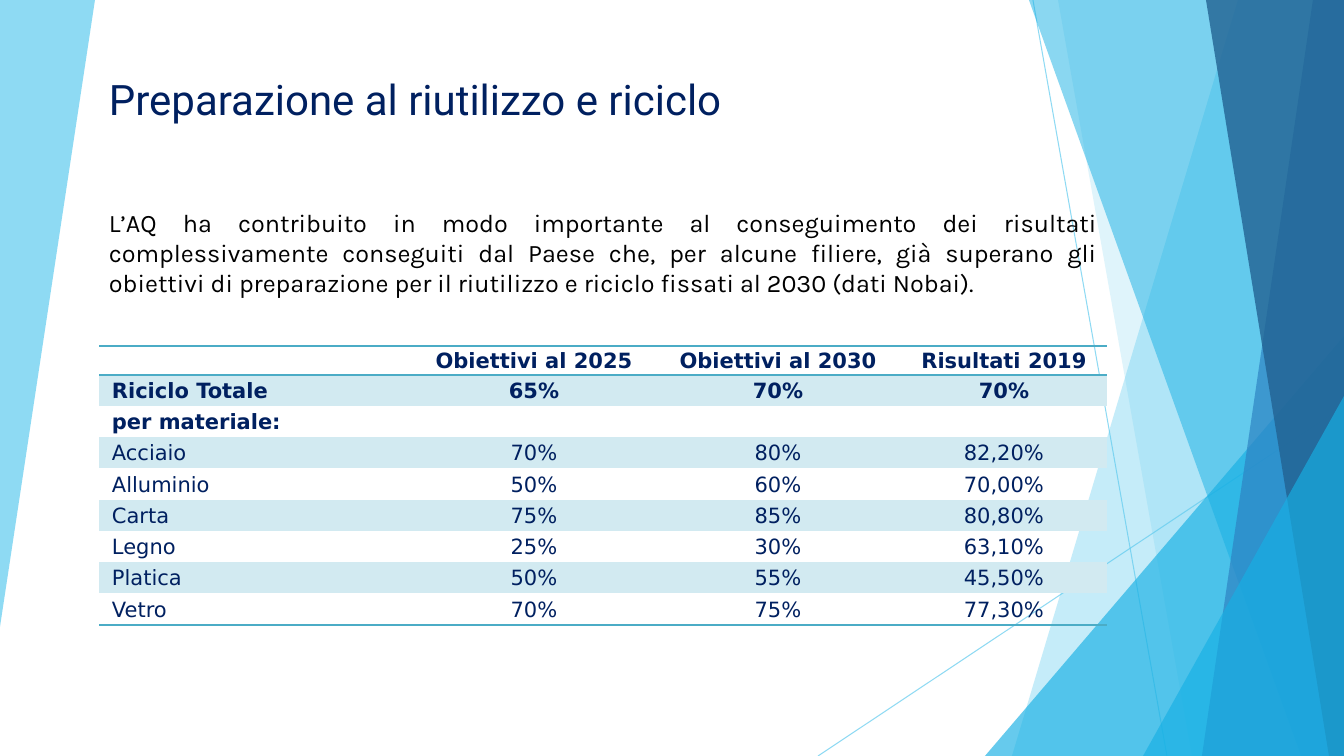
import lxml.etree
import pptx
import pptx.dml.color
import pptx.enum.shapes
import pptx.enum.text
import pptx.oxml
import pptx.oxml.ns
import pptx.util

SCALE = 914400 / 100.8  # EMU in one px
THEME = {
    "sky": "5FCBEF", "cyan": "17B0E4", "blue": "2E83C3", "deep": "226292",
    "navy": "002060", "black": "000000", "band": "D2EAF1", "rule": "4BACC6",
    "title_font": "Roboto", "body_font": "Karla", "table_font": "DejaVu Sans",
    "title_size": 30, "body_size": 18, "table_size": 15,
    "facet_line": 0.75, "rule_line": 1,
}
ALIGN = pptx.enum.text.PP_ALIGN
ANCHOR = pptx.enum.text.MSO_ANCHOR
qn = pptx.oxml.ns.qn


def px(*lengths):
    return [pptx.util.Emu(round(length * SCALE)) for length in lengths]


def write(paragraph, text, kind, color, bold=False):
    run = paragraph.add_run()
    run.text = text
    font_format = {
        "name": THEME[kind + "_font"],
        "size": pptx.util.Pt(THEME[kind + "_size"]),
        "bold": bold,
    }
    for name, value in font_format.items():
        setattr(run.font, name, value)
    run.font.color.rgb = pptx.dml.color.RGBColor.from_string(THEME[color])


presentation = pptx.Presentation()
presentation.slide_width, presentation.slide_height = px(1344, 756)
slide = presentation.slides.add_slide(presentation.slide_layouts[6])
shapes = slide.shapes

# Translucent facets, back to front: kind, geometry, colour, opacity in percent
facets = [
    ("outline", [(0, 0), (95, 0), (0, 627)], "sky", 70),
    ("line", (1033, 0, 1167, 756), "sky", 70),
    ("line", (1344, 406, 818, 756), "sky", 70),
    ("outline", [(1238, 0), (1344, 0), (1344, 756), (1012, 756)], "sky", 36),
    ("outline", [(1058, 0), (1344, 0), (1344, 756), (1192, 756)], "sky", 20),
    ("triangle", (985, 336, 359, 420), "cyan", 66),
    ("outline", [(1029, 0), (1344, 0), (1344, 756), (1301, 756)], "cyan", 50),
    ("outline", [(1313, 0), (1344, 0), (1344, 756), (1202, 756)], "blue", 70),
    ("outline", [(1206, 0), (1344, 0), (1344, 756), (1329, 756)], "deep", 80),
    ("triangle", (1143, 396, 201, 360), "cyan", 66),
]
for kind, geometry, color, opacity in facets:
    if kind == "line":
        shape = shapes.add_connector(
            pptx.enum.shapes.MSO_CONNECTOR.STRAIGHT, *px(*geometry))
        shape.line.width = pptx.util.Pt(THEME["facet_line"])
        paint = shape.line.fill
    else:
        if kind == "triangle":
            shape = shapes.add_shape(
                pptx.enum.shapes.MSO_SHAPE.ISOSCELES_TRIANGLE, *px(*geometry))
            shape.adjustments[0] = 1
        else:
            builder = shapes.build_freeform(*geometry[0], scale=SCALE)
            builder.add_line_segments(geometry[1:], close=True)
            shape = builder.convert_to_shape()
        shape.shadow.inherit = False
        shape.line.fill.background()
        paint = shape.fill
    paint.solid()
    paint.fore_color.rgb = pptx.dml.color.RGBColor.from_string(THEME[color])
    properties = shape._element.spPr
    rgb = next(properties.iter(qn("a:srgbClr")))
    lxml.etree.SubElement(rgb, qn("a:alpha"), val=str(opacity * 1000))
    if kind == "line":
        lxml.etree.SubElement(properties, qn("a:effectLst"))

# Title and introduction
texts = [
    ((99, 46, 1084, 106), "Preparazione al riutilizzo e riciclo",
     "title", "navy", ANCHOR.MIDDLE, ALIGN.LEFT, 0),
    ((99, 202, 1008, 124),
     "L’AQ ha contribuito in modo importante al conseguimento dei risultati "
     "complessivamente conseguiti dal Paese che, per alcune filiere, già "
     "superano gli obiettivi di preparazione per il riutilizzo e riciclo "
     "fissati al 2030 (dati Nobai).",
     "body", "black", ANCHOR.TOP, ALIGN.JUSTIFY, 6),
]
for box, text, kind, color, anchor, alignment, space_before in texts:
    frame = shapes.add_textbox(*px(*box)).text_frame
    frame.word_wrap = True
    frame.vertical_anchor = anchor
    paragraph = frame.paragraphs[0]
    paragraph.alignment = alignment
    paragraph.space_before = pptx.util.Pt(space_before)
    write(paragraph, text, kind, color)

# Table of targets and results
rows = [
    ("", "Obiettivi al 2025", "Obiettivi al 2030", "Risultati 2019"),
    ("Riciclo Totale", "65%", "70%", "70%"),
    ("per materiale:", "", "", ""),
    ("Acciaio", "70%", "80%", "82,20%"),
    ("Alluminio", "50%", "60%", "70,00%"),
    ("Carta", "75%", "85%", "80,80%"),
    ("Legno", "25%", "30%", "63,10%"),
    ("Platica", "50%", "55%", "45,50%"),
    ("Vetro", "70%", "75%", "77,30%"),
]
column_widths = [314, 242, 246, 206]
row_edges = [346] + [375 + 250 * step // 8 for step in range(9)]
table = shapes.add_table(
    len(rows), len(column_widths),
    *px(99, row_edges[0], sum(column_widths), row_edges[-1] - row_edges[0])).table
table.first_row = table.horz_banding = False
for column, width in zip(table.columns, px(*column_widths)):
    column.width = width
side, top, bottom = px(13, 2, 0)
cell_format = {
    "margin_left": side, "margin_right": side, "margin_top": top,
    "margin_bottom": bottom, "vertical_anchor": ANCHOR.MIDDLE,
}
last_row = len(rows) - 1
for row_index, row in enumerate(rows):
    table.rows[row_index].height = px(row_edges[row_index + 1] - row_edges[row_index])[0]
    ruled = {"a:lnT": row_index in (0, 1), "a:lnB": row_index in (0, last_row)}
    for column_index, text in enumerate(row):
        cell = table.cell(row_index, column_index)
        for name, value in cell_format.items():
            setattr(cell, name, value)

        # Horizontal rules only
        for edge in ("a:lnL", "a:lnR", "a:lnT", "a:lnB"):
            border = lxml.etree.SubElement(
                cell._tc.get_or_add_tcPr(), qn(edge),
                w=str(pptx.util.Pt(THEME["rule_line"])))
            if ruled.get(edge):
                solid = lxml.etree.SubElement(border, qn("a:solidFill"))
                lxml.etree.SubElement(solid, qn("a:srgbClr"), val=THEME["rule"])
            else:
                lxml.etree.SubElement(border, qn("a:noFill"))

        # Every second row is banded
        if row_index % 2:
            cell.fill.solid()
            cell.fill.fore_color.rgb = pptx.dml.color.RGBColor.from_string(THEME["band"])
        else:
            cell.fill.background()

        paragraph = cell.text_frame.paragraphs[0]
        paragraph.alignment = ALIGN.CENTER if column_index else ALIGN.JUSTIFY
        paragraph.space_after = pptx.util.Pt(6)
        if text:
            write(paragraph, text, "table", "navy", bold=row_index < 3)
        else:
            lxml.etree.SubElement(
                paragraph._p, qn("a:endParaRPr"), sz=str(THEME["table_size"] * 100))

presentation.save("out.pptx")
